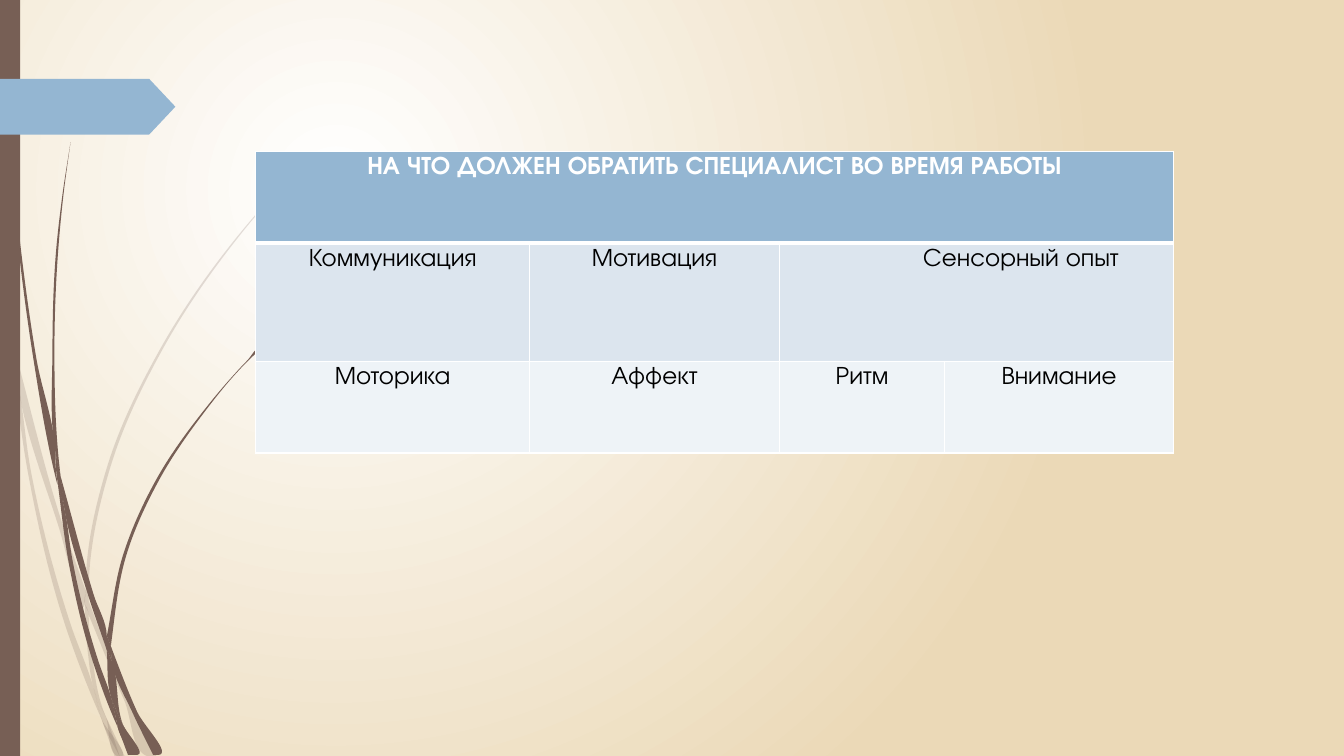
from dataclasses import dataclass
from math import dist

from lxml.etree import SubElement
from pptx import Presentation
from pptx.dml.color import RGBColor
from pptx.enum.shapes import MSO_SHAPE
from pptx.enum.text import PP_ALIGN
from pptx.oxml import parse_xml
from pptx.oxml.ns import nsdecls, qn
from pptx.util import Pt


@dataclass(frozen=True)
class Theme:
    font: str = "TeX Gyre Adventor"
    size: float = 18
    brown: str = "775F55"
    blue: str = "94B6D2"
    white: str = "FFFFFF"
    black: str = "000000"
    sand: str = "EBD9B7"
    band_dark: str = "DCE5EE"
    band_light: str = "EEF3F7"


GRID = 0.72

FAINT_STEMS = [
    ([(0, 282), (9, 322), (11, 350)], [(11, 350), (10, 344), (0, 299)]),
    ([(14, 345), (62, 520), (85, 586)], [(84, 599), (58, 522), (17, 376), (14, 345)]),
    ([(88, 596), (92, 607), (127, 692), (155, 751)], [(150, 751), (123, 694), (88, 610)]),
    ([(105, 711), (124, 751)], [(119, 751), (105, 711)]),
    ([(11, 350), (17, 376), (31, 469), (70, 619), (93, 683), (99, 707), (101, 714)],
     [(101, 714), (92, 693), (65, 621), (28, 470), (11, 350)]),
    ([(84, 599), (88, 608), (88, 610), (91, 646), (103, 706), (105, 711)],
     [(105, 711), (96, 692), (93, 683), (87, 646), (84, 599)]),
    ([(88, 596), (88, 584), (110, 462), (160, 349), (229, 245), (268, 198), (290, 175), (312, 154)],
     [(312, 153), (289, 175), (268, 197), (228, 244), (158, 348), (107, 461), (85, 584), (85, 586)]),
    ([(101, 714), (114, 751)], [(119, 751), (101, 714)]),
    ([(85, 586), (84, 599), (88, 608)], [(88, 610), (88, 596)]),
    ([(93, 683), (99, 707), (101, 714), (119, 751)], [(119, 751), (105, 711), (96, 692), (93, 683)]),
]

DARK_STEMS = [
    ([(3, 0), (4, 48), (7, 110), (17, 233), (33, 355), (56, 477), (57, 481)],
     [(55, 457), (55, 453), (36, 355), (19, 232), (8, 109), (5, 48), (4, 0)]),
    ([(60, 472), (64, 505), (88, 592), (106, 645)], [(106, 633), (106, 631), (93, 590), (60, 472)]),
    ([(110, 641), (111, 656), (132, 708), (152, 749)], [(157, 749), (136, 706), (113, 649), (110, 641)]),
    ([(57, 477), (68, 557), (93, 659), (111, 708), (117, 722)],
     [(116, 717), (110, 691), (98, 657), (72, 556), (64, 505), (57, 477)]),
    ([(70, 141), (62, 193), (56, 245), (52, 349), (55, 449), (60, 472)],
     [(60, 472), (58, 453), (54, 349), (58, 245), (63, 193), (70, 141)]),
    ([(122, 719), (133, 749)], [(136, 749), (122, 719)]),
    ([(55, 449), (55, 453), (57, 477), (64, 505)], [(64, 505), (60, 472), (55, 449)]),
    ([(110, 641), (111, 633), (125, 552), (158, 476), (205, 406), (231, 374), (245, 359), (261, 344)],
     [(260, 344), (245, 358), (231, 373), (204, 405), (156, 474), (122, 551), (106, 631)]),
    ([(117, 722), (127, 749)], [(131, 749), (117, 722)]),
    ([(106, 645), (110, 691), (116, 706), (122, 719)],
     [(122, 719), (121, 716), (111, 656), (109, 651), (106, 645)]),
    ([(106, 631), (106, 645), (109, 651), (111, 656)], [(111, 656), (110, 641), (106, 631)]),
    ([(110, 691), (116, 717), (117, 722), (130, 749)], [(133, 749), (122, 719), (116, 706), (110, 691)]),
]

COLUMNS = [195.6, 178.5, 118, 163.5]
ROWS = [65.5, 84.6, 65.5]
HEADING = "НА ЧТО ДОЛЖЕН ОБРАТИТЬ СПЕЦИАЛИСТ ВО ВРЕМЯ РАБОТЫ"
CELLS = [
    [HEADING, None, None, None],
    ["Коммуникация", "Мотивация", "Сенсорный опыт", None],
    ["Моторика", "Аффект", "Ритм", "Внимание"],
]


def tangents(edge):
    lengths = [dist(a, b) for a, b in zip(edge, edge[1:])]
    slopes = [((b[0] - a[0]) / n, (b[1] - a[1]) / n)
              for a, b, n in zip(edge, edge[1:], lengths)]
    inner = [tuple((p * n + q * m) / (m + n) for p, q in zip(u, v))
             for u, v, m, n in zip(slopes, slopes[1:], lengths, lengths[1:])]
    return [slopes[0], *inner, slopes[-1]]


def handles(edge):
    slopes = tangents(edge)
    for a, b, u, v in zip(edge, edge[1:], slopes, slopes[1:]):
        reach = dist(a, b) / 3
        yield (tuple(p + d * reach for p, d in zip(a, u)),
               tuple(p - d * reach for p, d in zip(b, v)))


class SlideBuilder:
    def __init__(self, slide, theme):
        self.s = slide
        self.theme = theme

    def background(self):
        self.s.background.fill.solid()
        solid = self.s.element.find(".//" + qn("p:bgPr")).find(qn("a:solidFill"))
        gradient = parse_xml(
            f'<a:gradFill {nsdecls("a")} rotWithShape="1"><a:gsLst>'
            f'<a:gs pos="0"><a:srgbClr val="{self.theme.white}"/></a:gs>'
            f'<a:gs pos="100000"><a:srgbClr val="{self.theme.sand}"/></a:gs></a:gsLst>'
            '<a:path path="circle"><a:fillToRect l="50000" t="50000" r="100000" b="100000"/>'
            '</a:path></a:gradFill>')
        solid.getparent().replace(solid, gradient)

    def paint(self, sp, color, opacity=100):
        sp.shadow.inherit = False
        sp.line.fill.background()
        sp.fill.solid()
        sp.fill.fore_color.rgb = RGBColor.from_string(color)
        if opacity < 100:
            clr = sp.element.spPr.find(qn("a:solidFill"))[0]
            SubElement(clr, qn("a:alpha")).set("val", str(opacity * 1000))

    def stem(self, down, up, opacity=100):
        up = up[1:] if up[0] == down[-1] else up
        knots = [(x * GRID * 100, y * GRID * 100) for x, y in down + up]
        builder = self.s.shapes.build_freeform(*knots[0], scale=Pt(0.01))
        builder.add_line_segments(knots[1:], close=True)
        sp = builder.convert_to_shape()
        self.bend(sp, len(down))
        self.paint(sp, self.theme.brown, opacity)

    def bend(self, sp, turn):
        points = [(int(pt.get("x")), int(pt.get("y"))) for pt in sp.element.iter(qn("a:pt"))]
        curves = [*handles(points[:turn]), *handles(points[turn - 1:])]
        for line, pair in zip(list(sp.element.iter(qn("a:lnTo"))), curves):
            line.tag = qn("a:cubicBezTo")
            for i, (x, y) in enumerate(pair):
                pt = SubElement(line, qn("a:pt"), x=str(round(x)), y=str(round(y)))
                line.insert(i, pt)

    def shape(self, kind, x, y, w, h, color):
        sp = self.s.shapes.add_shape(kind, Pt(x), Pt(y), Pt(w), Pt(h))
        self.paint(sp, color)
        return sp

    def borders(self, cell, top, bottom):
        tcPr = cell._tc.get_or_add_tcPr()
        for side, width in (("L", 1), ("R", 1), ("T", top), ("B", bottom)):
            ln = SubElement(tcPr, qn(f"a:ln{side}"), w=str(Pt(width)))
            solid = SubElement(ln, qn("a:solidFill"))
            SubElement(solid, qn("a:srgbClr"), val=self.theme.white)

    def cell(self, cell, text, fill, color, bold):
        cell.fill.solid()
        cell.fill.fore_color.rgb = RGBColor.from_string(fill)
        cell.margin_top, cell.margin_bottom = Pt(3.6), 0
        cell.margin_left = cell.margin_right = Pt(5.4)
        if text is None:
            return
        p = cell.text_frame.paragraphs[0]
        p.text = text
        p.alignment = PP_ALIGN.CENTER
        font = p.runs[0].font
        font.name, font.size, font.bold = self.theme.font, Pt(self.theme.size), bold
        font.color.rgb = RGBColor.from_string(color)

    def table(self, x, y, columns, rows, texts):
        th = self.theme
        table = self.s.shapes.add_table(
            len(rows), len(columns), Pt(x), Pt(y), Pt(sum(columns)), Pt(sum(rows))).table
        for column, width in zip(table.columns, columns):
            column.width = Pt(width)
        fills = [th.blue, th.band_dark, th.band_light]
        for i, (height, fill) in enumerate(zip(rows, fills)):
            table.rows[i].height = Pt(height)
            for j, text in enumerate(texts[i]):
                cell = table.cell(i, j)
                self.borders(cell, 3 if i == 1 else 1, 3 if i == 0 else 1)
                self.cell(cell, text, fill, th.black if i else th.white, i == 0)
        table.cell(0, 0).merge(table.cell(0, 3))
        table.cell(1, 2).merge(table.cell(1, 3))
        return table


def main():
    prs = Presentation()
    prs.slide_width, prs.slide_height = Pt(960), Pt(540)
    page = SlideBuilder(prs.slides.add_slide(prs.slide_layouts[6]), Theme())
    page.background()
    for stems, opacity in ((FAINT_STEMS, 20), (DARK_STEMS, 100)):
        for down, up in stems:
            page.stem(down, up, opacity)
    page.shape(MSO_SHAPE.RECTANGLE, 0, 0, 14.4, 540, page.theme.brown)
    banner = page.shape(MSO_SHAPE.PENTAGON, 0, 56.3, 125.3, 39.9, page.theme.blue)
    banner.adjustments[0] = 0.47
    table = page.table(182.7, 108, COLUMNS, ROWS, CELLS)
    table.cell(1, 2).margin_left = Pt(69)
    prs.save("out.pptx")


if __name__ == "__main__":
    main()
